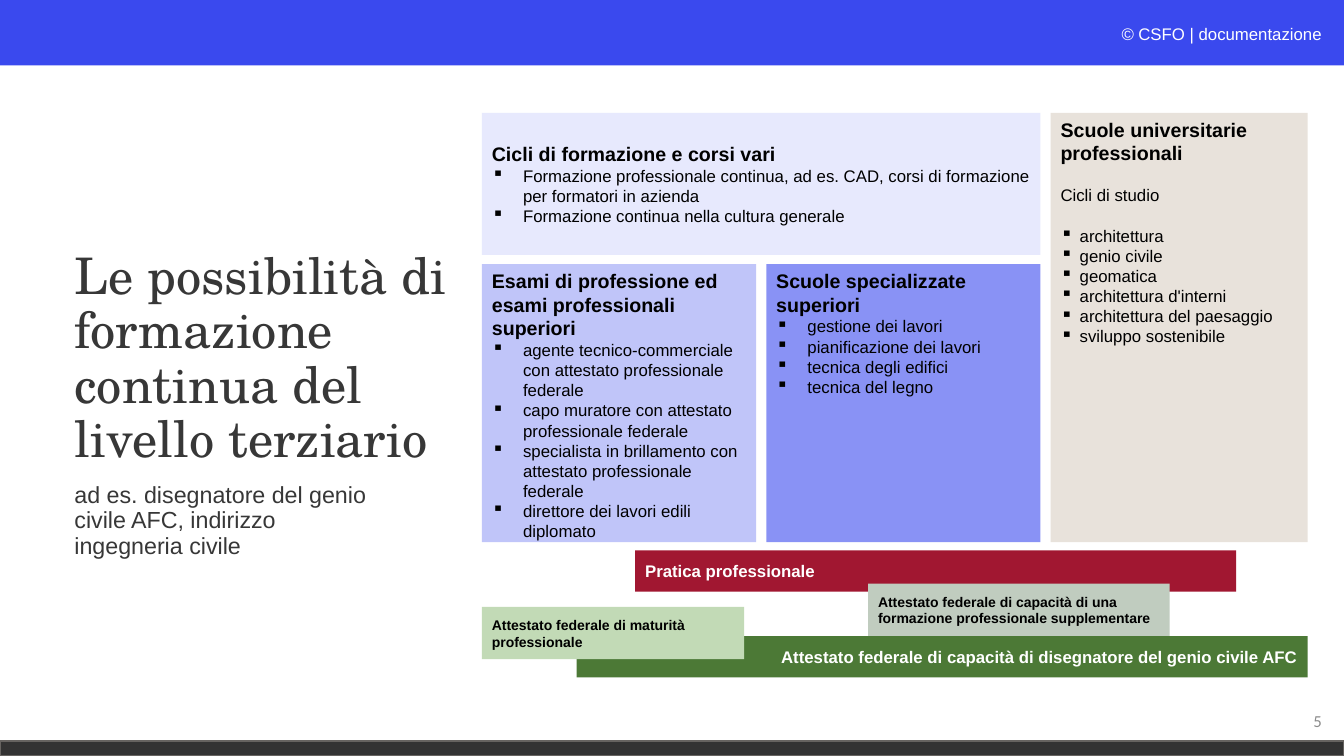
import pptx
import pptx.util
import pptx.dml.color
import pptx.enum.shapes
import pptx.enum.text
from lxml import etree

Inches = pptx.util.Inches
Pt = pptx.util.Pt
ALIGN = pptx.enum.text.PP_ALIGN
ANCHOR = pptx.enum.text.MSO_ANCHOR
RECTANGLE = pptx.enum.shapes.MSO_SHAPE.RECTANGLE

COLORS = {
    "banner": "3A49EE", "footer": "333333", "footer line": "666360",
    "title": "373737", "number": "8C8C8C", "black": "000000", "white": "FFFFFF",
    "courses": "E7E9FD", "universities": "E8E2DB", "exams": "C0C5F9",
    "colleges": "8992F5", "practice": "A11731", "extra": "C0CCBF",
    "certificate": "4C7936", "maturity": "C2DAB6",
}

deck = pptx.Presentation()
deck.slide_width = Inches(13.33)
deck.slide_height = Inches(7.5)
page = deck.slides.add_slide(deck.slide_layouts[5])


def add_block(left, top, width, height, fill):
    block = page.shapes.add_shape(RECTANGLE, Inches(left), Inches(top), Inches(width), Inches(height))
    block.shadow.inherit = False
    block.fill.solid()
    block.fill.fore_color.rgb = pptx.dml.color.RGBColor.from_string(COLORS[fill])
    block.line.fill.background()
    block.text_frame.word_wrap = True
    return block


def add_span(para, text, size, color, bold=False, font="Arial"):
    span = para.add_run()
    span.text = text
    span.font.name = font
    span.font.size = Pt(size)
    span.font.bold = bold
    span.font.color.rgb = pptx.dml.color.RGBColor.from_string(COLORS[color])
    return span


add_block(0, 0, 13.33, 0.65, "banner")
footer = add_block(0, 7.35, 13.33, 0.15, "footer")
footer.line.color.rgb = pptx.dml.color.RGBColor.from_string(COLORS["footer line"])
footer.line.width = Pt(1)

title = page.shapes.title
title.left, title.top, title.width, title.height = Inches(0.64), Inches(2.39), Inches(4), Inches(2.36)
title.text_frame.word_wrap = True
title.text_frame.auto_size = pptx.enum.text.MSO_AUTO_SIZE.NONE
title.text_frame.vertical_anchor = ANCHOR.MIDDLE
para = title.text_frame.paragraphs[0]
para.alignment = ALIGN.LEFT
para.line_spacing = 0.9
add_span(para, "Le possibilità di formazione continua del livello terziario", 36, "title", font="TeX Gyre Schola")

subtitle = page.shapes.add_textbox(Inches(0.64), Inches(4.75), Inches(3.15), Inches(0.88))
subtitle.text_frame.word_wrap = True
para = subtitle.text_frame.paragraphs[0]
para.line_spacing = 0.9
add_span(para, "ad es. disegnatore del genio civile AFC, indirizzo ingegneria civile", 16.6, "title")

credit = page.shapes.add_textbox(Inches(8.62), Inches(0.19), Inches(4.59), Inches(0.3))
credit.text_frame.word_wrap = True
para = credit.text_frame.paragraphs[0]
para.alignment = ALIGN.RIGHT
add_span(para, "© ", 12, "white").font.italic = True
add_span(para, "CSFO | documentazione", 12, "white")

number = page.shapes.add_textbox(Inches(10.21), Inches(6.95), Inches(3), Inches(0.4))
number.text_frame.word_wrap = True
number.text_frame.vertical_anchor = ANCHOR.MIDDLE
para = number.text_frame.paragraphs[0]
para.alignment = ALIGN.RIGHT
add_span(para, "5", 12, "number", font="Calibri")

panels = [
    (4.78, 1.12, 5.54, 1.41, "courses", ANCHOR.MIDDLE, 0.31,
     ["Cicli di formazione e corsi vari"], [],
     ["Formazione professionale continua, ad es. CAD, corsi di formazione per formatori in azienda",
      "Formazione continua nella cultura generale"]),
    (10.42, 1.12, 2.55, 4.26, "universities", ANCHOR.TOP, 0.19,
     ["Scuole universitarie", "professionali"], ["Cicli di studio"],
     ["architettura", "genio civile", "geomatica", "architettura d'interni",
      "architettura del paesaggio", "sviluppo sostenibile"]),
    (4.78, 2.62, 2.72, 2.76, "exams", ANCHOR.TOP, 0.31,
     ["Esami di professione ed esami professionali", "superiori"], [],
     ["agente tecnico-commerciale con attestato professionale federale",
      "capo muratore con attestato professionale federale",
      "specialista in brillamento con attestato professionale federale",
      "direttore dei lavori edili diplomato"]),
    (7.6, 2.62, 2.72, 2.76, "colleges", ANCHOR.TOP, 0.31,
     ["Scuole specializzate", "superiori"], [],
     ["gestione dei lavori", "pianificazione dei lavori",
      "tecnica degli edifici", "tecnica del legno"]),
]
for left, top, width, height, fill, anchor, indent, heading, intro, bullets in panels:
    frame = add_block(left, top, width, height, fill).text_frame
    frame.vertical_anchor = anchor
    lines = heading + intro + bullets
    first_bullet = len(heading) + len(intro)
    for index, line in enumerate(lines):
        para = frame.add_paragraph() if index else frame.paragraphs[0]
        para.alignment = ALIGN.LEFT
        is_heading = index < len(heading)
        if intro and index in (len(heading), first_bullet):
            para.space_before = Pt(14.4)
        if index >= first_bullet:
            props = para._p.get_or_add_pPr()
            props.set("marL", str(Inches(indent)))
            props.set("indent", str(-Inches(indent)))
            bullet = etree.SubElement(props, pptx.oxml.ns.qn("a:buChar"))
            bullet.set("char", "▪")
        add_span(para, line, 14 if is_heading else 12, "black", is_heading)

bars = [
    (6.3, 5.46, 5.96, 0.41, "practice", "Pratica professionale", 12, "white", ALIGN.LEFT),
    (8.61, 5.79, 2.99, 0.52, "extra",
     "Attestato federale di capacità di una formazione professionale supplementare", 10, "black", ALIGN.LEFT),
    (5.72, 6.31, 7.25, 0.41, "certificate",
     "Attestato federale di capacità di disegnatore del genio civile AFC", 12, "white", ALIGN.RIGHT),
    (4.78, 6.02, 2.6, 0.52, "maturity",
     "Attestato federale di maturità professionale", 10, "black", ALIGN.LEFT),
]
for left, top, width, height, fill, label, size, color, alignment in bars:
    frame = add_block(left, top, width, height, fill).text_frame
    frame.vertical_anchor = ANCHOR.MIDDLE
    para = frame.paragraphs[0]
    para.alignment = alignment
    add_span(para, label, size, color, True)

deck.save("out.pptx")
